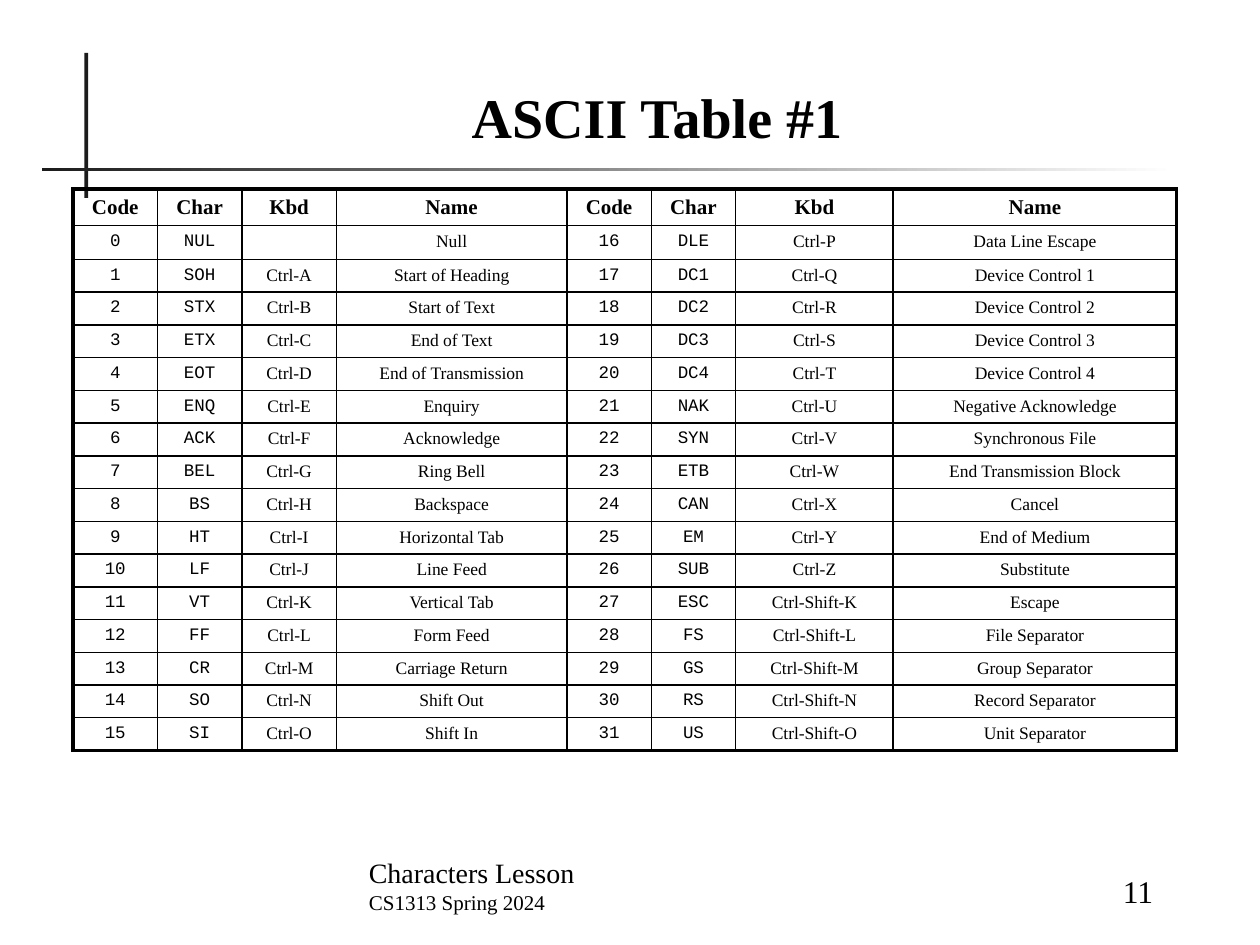
from lxml.etree import SubElement
from pptx import Presentation
from pptx.dml.color import RGBColor
from pptx.enum.shapes import MSO_SHAPE
from pptx.enum.text import MSO_ANCHOR, MSO_AUTO_SIZE, PP_ALIGN
from pptx.oxml.ns import qn
from pptx.util import Inches, Pt

COLORS = {"text": "000000", "rule": "1C1C1C", "paper": "FFFFFF"}
SERIF, MONO = "Times New Roman", "Courier New"
HEADER = ["Code", "Char", "Kbd", "Name"]
COL_FONTS = [MONO, MONO, SERIF, SERIF]
COL_WIDTHS = [0.67, 0.67, 0.75, 1.83, 0.67, 0.67, 1.25, 2.25]
HEADER_HEIGHT, ROW_HEIGHT = 0.29, 0.26
HALF = 16
CONTROLS = [
    ("NUL", "Null"), ("SOH", "Start of Heading"), ("STX", "Start of Text"),
    ("ETX", "End of Text"), ("EOT", "End of Transmission"),
    ("ENQ", "Enquiry"), ("ACK", "Acknowledge"), ("BEL", "Ring Bell"),
    ("BS", "Backspace"), ("HT", "Horizontal Tab"), ("LF", "Line Feed"),
    ("VT", "Vertical Tab"), ("FF", "Form Feed"), ("CR", "Carriage Return"),
    ("SO", "Shift Out"), ("SI", "Shift In"), ("DLE", "Data Line Escape"),
    ("DC1", "Device Control 1"), ("DC2", "Device Control 2"),
    ("DC3", "Device Control 3"), ("DC4", "Device Control 4"),
    ("NAK", "Negative Acknowledge"), ("SYN", "Synchronous File"),
    ("ETB", "End Transmission Block"), ("CAN", "Cancel"),
    ("EM", "End of Medium"), ("SUB", "Substitute"), ("ESC", "Escape"),
    ("FS", "File Separator"), ("GS", "Group Separator"),
    ("RS", "Record Separator"), ("US", "Unit Separator"),
]


def rgb(name):
    return RGBColor.from_string(COLORS[name])


def kbd(code):
    """Key that types a control code: Ctrl-A to Ctrl-Z, then Ctrl-Shift-K on."""
    if code == 0:
        return ""
    return f"Ctrl-{chr(64 + code)}" if code <= 26 else f"Ctrl-Shift-{chr(48 + code)}"


def ascii_row(code):
    char, name = CONTROLS[code]
    return [str(code), char, kbd(code), name]


class SlideBuilder:
    def __init__(self, prs):
        self.s = prs.slides.add_slide(prs.slide_layouts[5])

    def set_line(self, p, text, size, font=SERIF, bold=False, align=PP_ALIGN.LEFT):
        p.alignment = align
        if not text:
            p._p.get_or_add_endParaRPr().set("sz", str(size * 100))
            return
        r = p.add_run()
        r.text = text
        for key, value in {"name": font, "size": Pt(size), "bold": bold}.items():
            setattr(r.font, key, value)
        r.font.color.rgb = rgb("text")

    def place(self, sp, box):
        for key, value in zip(("left", "top", "width", "height"), box):
            setattr(sp, key, Inches(value))

    def frame(self, sp):
        tf = sp.text_frame
        options = {"word_wrap": True, "auto_size": MSO_AUTO_SIZE.NONE,
                   "vertical_anchor": MSO_ANCHOR.BOTTOM}
        for key, value in options.items():
            setattr(tf, key, value)
        return tf

    def title(self, text, box):
        sp = self.s.shapes.title
        self.place(sp, box)
        self.set_line(self.frame(sp).paragraphs[0], text, 32, bold=True,
                      align=PP_ALIGN.CENTER)

    def text(self, lines, box, align=PP_ALIGN.LEFT):
        tf = self.frame(self.s.shapes.add_textbox(*map(Inches, box)))
        for i, (line, size) in enumerate(lines):
            p = tf.add_paragraph() if i else tf.paragraphs[0]
            self.set_line(p, line, size, align=align)

    def bar(self, box, fade=False):
        sp = self.s.shapes.add_shape(MSO_SHAPE.RECTANGLE, *map(Inches, box))
        sp.shadow.inherit = False
        sp.line.fill.background()
        if fade:
            sp.fill.gradient()
            sp.fill.gradient_angle = 0
            for stop, name in zip(sp.fill.gradient_stops, ("rule", "paper")):
                stop.color.rgb = rgb(name)
        else:
            sp.fill.solid()
            sp.fill.fore_color.rgb = rgb("rule")

    def borders(self, cell, widths):
        """Line the left, right, top and bottom edges, widths in points."""
        tc_pr = cell._tc.get_or_add_tcPr()
        for side, width in zip(("lnL", "lnR", "lnT", "lnB"), widths):
            ln = SubElement(tc_pr, qn(f"a:{side}"), w=str(Pt(width)))
            fill = SubElement(ln, qn("a:solidFill"))
            SubElement(fill, qn("a:srgbClr"), val=COLORS["text"])

    def table(self, rows, left, top):
        n_rows, n_cols = len(rows), len(COL_WIDTHS)
        heights = [HEADER_HEIGHT] + [ROW_HEIGHT] * (n_rows - 1)
        size = (sum(COL_WIDTHS), sum(heights))
        table = self.s.shapes.add_table(
            n_rows, n_cols, *map(Inches, (left, top, *size))).table
        table.first_row = table.horz_banding = False
        for col, width in zip(table.columns, COL_WIDTHS):
            col.width = Inches(width)
        for i, values in enumerate(rows):
            table.rows[i].height = Inches(heights[i])
            for j, value in enumerate(values):
                cell = table.cell(i, j)
                outer = (j == 0, j == n_cols - 1, i == 0, i == n_rows - 1)
                self.borders(cell, [2.25 if edge else 1 for edge in outer])
                cell.fill.background()
                style = ({"size": 12, "bold": True} if i == 0 else
                         {"size": 10, "font": COL_FONTS[j % len(COL_FONTS)]})
                self.set_line(cell.text_frame.paragraphs[0], value,
                              align=PP_ALIGN.CENTER, **style)


def main():
    prs = Presentation()
    prs.slide_width, prs.slide_height = Inches(10), Inches(7.5)
    b = SlideBuilder(prs)
    b.bar((0.67, 0.42, 0.03, 1.15))
    b.bar((0.33, 1.33, 9, 0.03), fade=True)
    b.text([("11", 18)], (7.83, 6.77, 1.42, 0.5), PP_ALIGN.RIGHT)
    b.text([("Characters Lesson", 16), ("CS1313 Spring 2024", 12)],
           (2.83, 6.81, 4.83, 0.5))
    rows = [ascii_row(i) + ascii_row(i + HALF) for i in range(HALF)]
    b.table([HEADER * 2] + rows, 0.58, 1.5)
    b.title("ASCII Table #1", (0.83, 0.5, 8.77, 0.74))
    prs.save("out.pptx")


if __name__ == "__main__":
    main()
